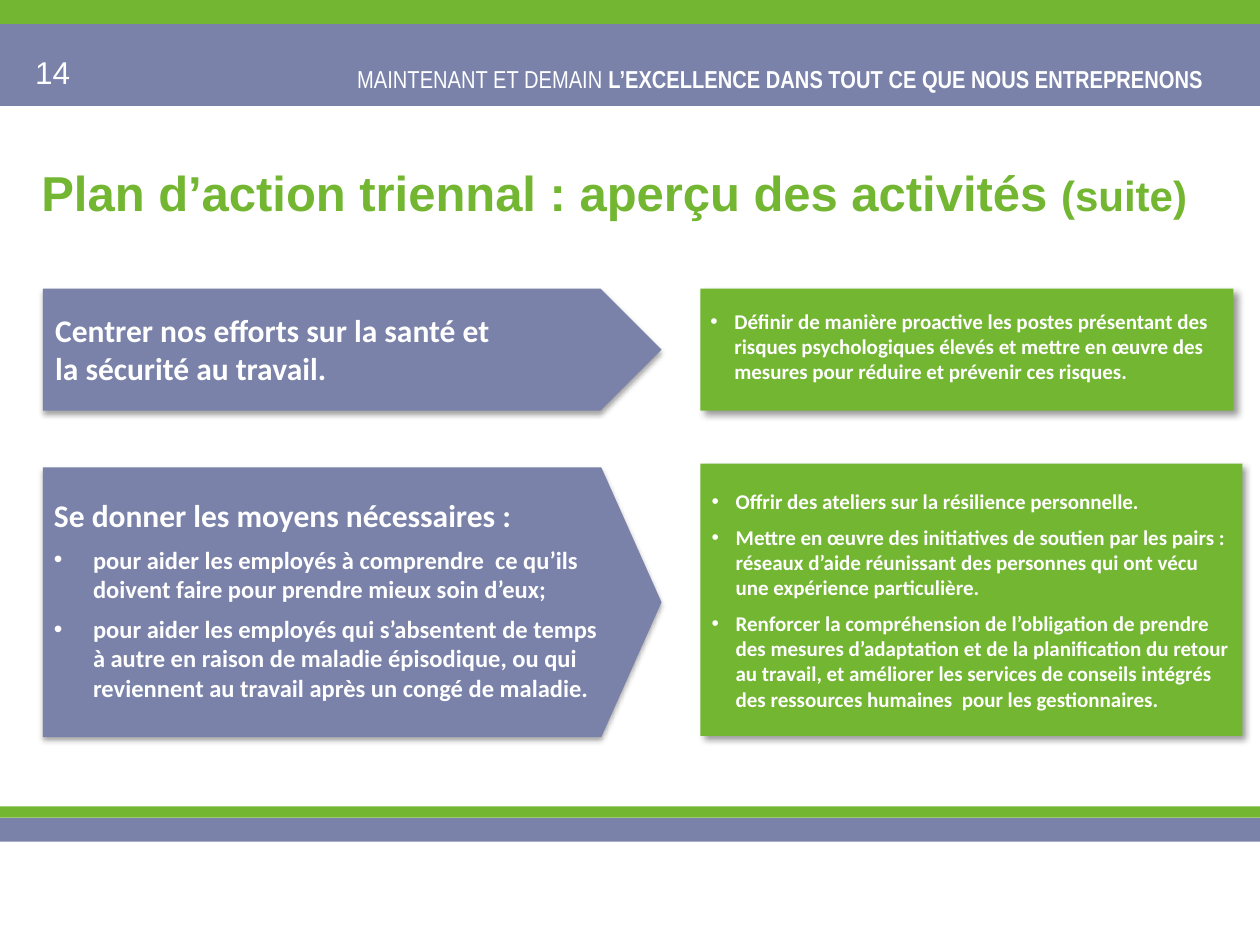
from lxml import etree
from pptx import Presentation
from pptx import util as u
from pptx.dml.color import RGBColor
from pptx.enum import shapes, text
from pptx.oxml import parse_xml
from pptx.oxml.ns import nsdecls, qn

COLORS = {"green": "73B632", "slate": "7A82AA", "white": "FFFFFF", "shadow": "000000"}
SHADOWS = {
    "slate": {"alpha": 35, "blur": 3.1, "distance": 1.8, "angle": 90},
    "green": {"alpha": 40, "blur": 4, "distance": 3, "angle": 45},
}
HEADING = {"name": "Calibri", "size": u.Pt(18), "bold": True}
GOAL = {**HEADING, "size": u.Pt(14)}
ACTIVITY = {**HEADING, "size": u.Pt(12)}
SPACED = {"space_after": u.Pt(6)}
BANDS = [
    ("slate", 0.19, 0.65),
    ("green", 0, 0.19),
    ("slate", 6.49, 0.19),
    ("green", 6.4, 0.09),
]


def inches(values):
    return [u.Inches(value) for value in values]


def add_block(page, kind, place, color):
    block = page.shapes.add_shape(kind, *inches(place))
    block.shadow.inherit = False
    block.fill.solid()
    block.fill.fore_color.rgb = RGBColor.from_string(COLORS[color])
    block.line.fill.background()
    return block


def add_shadow(block, alpha, blur, distance, angle):
    effects = block._element.spPr.find(qn("a:effectLst"))
    effects.append(parse_xml(
        f'<a:outerShdw {nsdecls("a")} blurRad="{u.Pt(blur)}" dist="{u.Pt(distance)}" '
        f'dir="{angle * 60000}" algn="tl" rotWithShape="0">'
        f'<a:srgbClr val="{COLORS["shadow"]}"><a:alpha val="{alpha * 1000}"/></a:srgbClr>'
        f'</a:outerShdw>'))


def add_pentagon(page, place, color, point):
    pentagon = add_block(page, shapes.MSO_SHAPE.PENTAGON, place, color)
    pentagon.adjustments[0] = point
    add_shadow(pentagon, **SHADOWS[color])


def add_bullet(para, indent):
    properties = para._p.get_or_add_pPr()
    properties.set("marL", str(u.Inches(indent)))
    properties.set("indent", str(u.Inches(-indent)))
    etree.SubElement(properties, qn("a:buFont")).set("typeface", "Arial")
    etree.SubElement(properties, qn("a:buChar")).set("char", "•")


def add_text(page, place, paragraphs, color="white", anchor=text.MSO_ANCHOR.TOP):
    box = page.shapes.add_textbox(*inches(place))
    frame = box.text_frame
    frame.word_wrap = True
    frame.vertical_anchor = anchor
    for index, (spans, layout, indent) in enumerate(paragraphs):
        para = frame.add_paragraph() if index else frame.paragraphs[0]
        if indent:
            add_bullet(para, indent)
        for name, value in layout.items():
            setattr(para, name, value)
        for words, style in spans:
            span = para.add_run()
            span.text = words
            span.font.color.rgb = RGBColor.from_string(COLORS[color])
            for name, value in style.items():
                setattr(span.font, name, value)


def plain(lines, style, layout={}, indent=0):
    return [([(line, style)], layout, indent) for line in lines]


def add_frame(page):
    for color, top, height in BANDS:
        add_block(page, shapes.MSO_SHAPE.RECTANGLE, (0, top, 10, height), color)
    motto = {"name": "Arial Narrow", "size": u.Pt(14)}
    add_text(page, (2.41, 0.46, 7.24, 0.34), [([
        ("MAINTENANT ET DEMAIN ", motto),
        ("L’EXCELLENCE DANS TOUT CE QUE NOUS ENTREPRENONS", {**motto, "bold": True}),
    ], {"alignment": text.PP_ALIGN.RIGHT}, 0)])
    add_text(page, (0.18, 0.37, 2.33, 0.4),
             plain(["14"], {"name": "Arial", "size": u.Pt(18)}))


def add_title(page):
    style = {"name": "Arial", "size": u.Pt(28), "bold": True}
    add_text(page, (0.23, 0.9, 9.49, 1.25), [([
        ("Plan d’action triennal : aperçu des activités ", style),
        ("(suite)", {**style, "size": u.Pt(24)}),
    ], {}, 0)], "green", text.MSO_ANCHOR.MIDDLE)


def add_health_row(page):
    add_pentagon(page, (0.34, 2.29, 4.91, 0.97), "slate", 0.5)
    add_text(page, (0.34, 2.42, 4.63, 0.71), plain([
        "Centrer nos efforts sur la santé et",
        "la sécurité au travail.",
    ], HEADING))
    add_pentagon(page, (5.56, 2.29, 4.23, 0.97), "green", 0)
    add_text(page, (5.54, 2.4, 4.3, 0.71), plain([
        "Définir de manière proactive les postes présentant des risques psychologiques "
        "élevés et mettre en œuvre des mesures pour réduire et prévenir ces risques.",
    ], ACTIVITY, indent=0.19))


def add_means_row(page):
    add_pentagon(page, (0.34, 3.71, 4.91, 2.14), "slate", 0.223)
    goals = plain([
        "pour aider les employés à comprendre  ce qu’ils doivent faire pour prendre "
        "mieux soin d’eux;",
        "pour aider les employés qui s’absentent de temps à autre en raison de maladie "
        "épisodique, ou qui reviennent au travail après un congé de maladie.",
    ], GOAL, SPACED, 0.31)
    add_text(page, (0.33, 3.89, 4.65, 1.75),
             plain(["Se donner les moyens nécessaires :"], HEADING, SPACED) + goals)
    add_pentagon(page, (5.56, 3.68, 4.3, 2.16), "green", 0)
    add_text(page, (5.55, 3.83, 4.32, 1.88), plain([
        "Offrir des ateliers sur la résilience personnelle.",
        "Mettre en œuvre des initiatives de soutien par les pairs : réseaux d’aide "
        "réunissant des personnes qui ont vécu une expérience particulière.",
        "Renforcer la compréhension de l’obligation de prendre des mesures d’adaptation "
        "et de la planification du retour au travail, et améliorer les services de "
        "conseils intégrés des ressources humaines  pour les gestionnaires.",
    ], ACTIVITY, SPACED, 0.19))


def main():
    deck = Presentation()
    deck.slide_width, deck.slide_height = inches((10, 7.5))
    page = deck.slides.add_slide(deck.slide_layouts[6])
    add_frame(page)
    add_means_row(page)
    add_health_row(page)
    add_title(page)
    deck.save("out.pptx")


if __name__ == "__main__":
    main()
